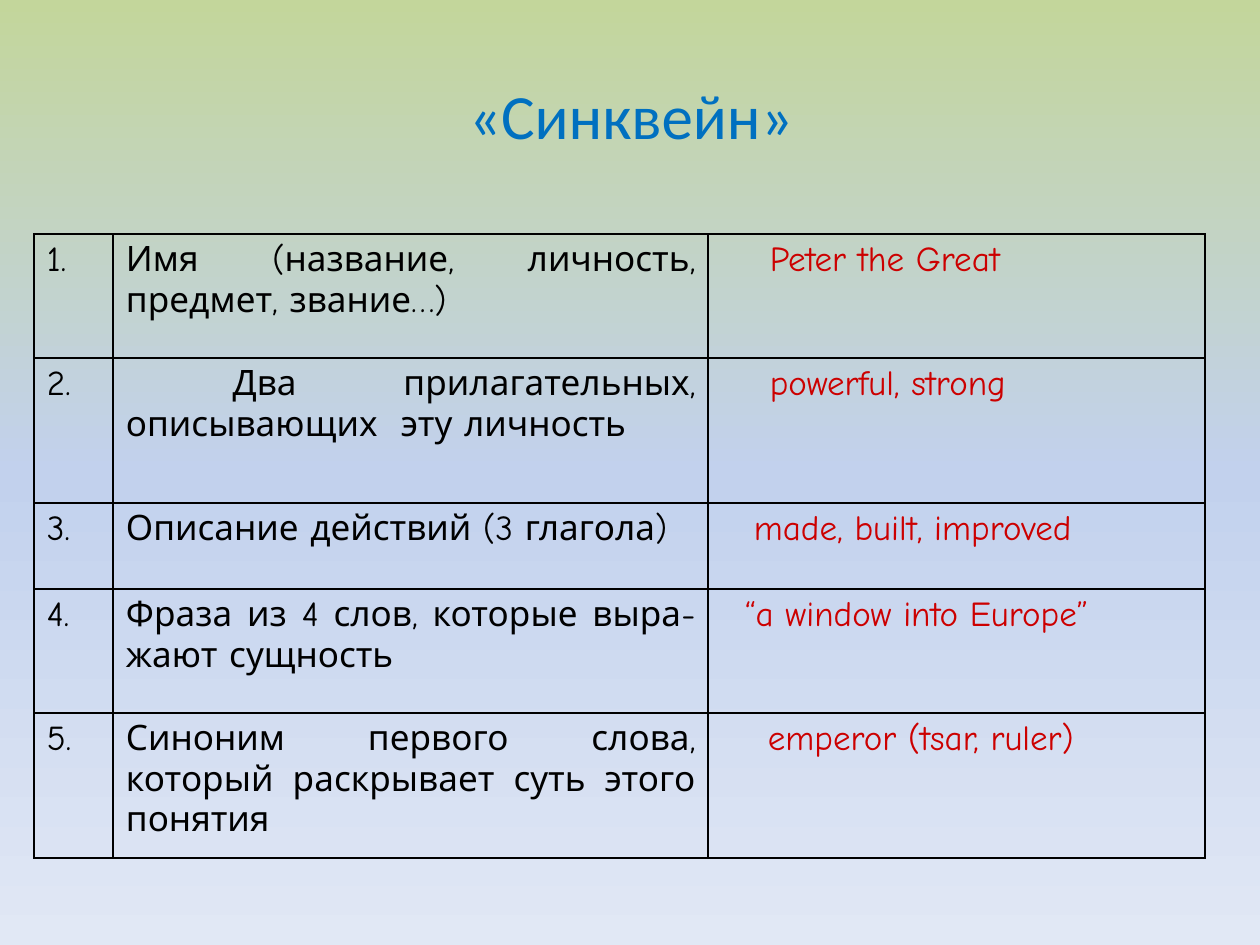
"""Build the «Синквейн» slide: a title above a five-step table with examples."""
from pptx import Presentation
from pptx.dml.color import RGBColor
from pptx.enum.text import MSO_ANCHOR, PP_ALIGN
from pptx.oxml import parse_xml
from pptx.oxml.ns import nsdecls
from pptx.util import Pt

EMU_PER_PX = 914400 / 126
CENTER, JUSTIFY, LEFT = PP_ALIGN.CENTER, PP_ALIGN.JUSTIFY, PP_ALIGN.LEFT
MIDDLE = MSO_ANCHOR.MIDDLE

COLUMN_WIDTHS = [79, 595, 497]
ROW_HEIGHTS = [124, 145, 86, 124, 145]
STEPS = [
    ("Имя (название, личность, предмет, звание…)", "Peter the Great", 49),
    (" Два прилагательных, описывающих  эту личность", "powerful, strong", 49),
    ("Описание действий (3 глагола)", "made, built, improved", 33),
    ("Фраза из 4 слов, которые выра-жают сущность", "“a window into Europe”", 24),
    ("Синоним первого слова, который раскрывает суть этого понятия",
     "emperor (tsar, ruler)", 47),
]


def px(length):
    return round(length * EMU_PER_PX)


def rgb(color):
    return RGBColor.from_string(color)


def write(frame, text, *, size, font, color, align):
    paragraph = frame.paragraphs[0]
    paragraph.alignment = align
    run = paragraph.add_run()
    run.text = text
    run.font.size = Pt(size)
    run.font.name = font
    run.font.color.rgb = rgb(color)


class SlideBuilder:
    title_font, table_font = "Calibri", "Comic Neue"
    title_color, text_color, example_color = "0070C0", "000000", "CC0000"
    border_color, cell_padding = "000000", 13

    def __init__(self, presentation):
        self.slide = presentation.slides.add_slide(presentation.slide_layouts[6])

    def background(self, stops):
        stop_xml = "".join(
            f'<a:gs pos="{percent * 1000}"><a:srgbClr val="{color}"/></a:gs>'
            for percent, color in stops)
        self.slide.element.cSld.insert(0, parse_xml(
            f'<p:bg {nsdecls("p", "a")}><p:bgPr><a:gradFill rotWithShape="1">'
            f'<a:gsLst>{stop_xml}</a:gsLst><a:lin ang="5400000" scaled="0"/>'
            '</a:gradFill><a:effectLst/></p:bgPr></p:bg>'))

    def title(self, text, left, top, width, height):
        frame = self.slide.shapes.add_textbox(
            px(left), px(top), px(width), px(height)).text_frame
        frame.word_wrap = True
        frame.vertical_anchor = MIDDLE
        write(frame, text, size=36, font=self.title_font,
              color=self.title_color, align=CENTER)

    def cell(self, cell, text, color, align=JUSTIFY, indent=0):
        cell.margin_left = px(self.cell_padding + indent)
        properties = cell._tc.get_or_add_tcPr()
        for side in ("lnL", "lnR", "lnT", "lnB"):
            properties.append(parse_xml(
                f'<a:{side} {nsdecls("a")} w="12700"><a:solidFill>'
                f'<a:srgbClr val="{self.border_color}"/></a:solidFill></a:{side}>'))
        cell.fill.background()
        write(cell.text_frame, text, size=20, font=self.table_font,
              color=color, align=align)

    def steps_table(self, steps, left, top):
        table = self.slide.shapes.add_table(
            len(steps), len(COLUMN_WIDTHS), px(left), px(top),
            px(sum(COLUMN_WIDTHS)), px(sum(ROW_HEIGHTS))).table
        table.first_row = table.horz_banding = False
        for column, width in zip(table.columns, COLUMN_WIDTHS):
            column.width = px(width)
        for row, height in zip(table.rows, ROW_HEIGHTS):
            row.height = px(height)
        for index, (task, example, indent) in enumerate(steps):
            self.cell(table.cell(index, 0), f"{index + 1}.", self.text_color)
            self.cell(table.cell(index, 1), task, self.text_color)
            self.cell(table.cell(index, 2), example, self.example_color, LEFT, indent)


def main():
    presentation = Presentation()
    presentation.slide_width, presentation.slide_height = px(1260), px(945)
    builder = SlideBuilder(presentation)
    builder.background([(0, "C3D69B"), (50, "C2D1ED"), (100, "E1E8F5")])
    builder.steps_table(STEPS, 34, 234)
    builder.title("«Синквейн»", 64, 45, 1134, 139)
    presentation.save("out.pptx")


if __name__ == "__main__":
    main()
